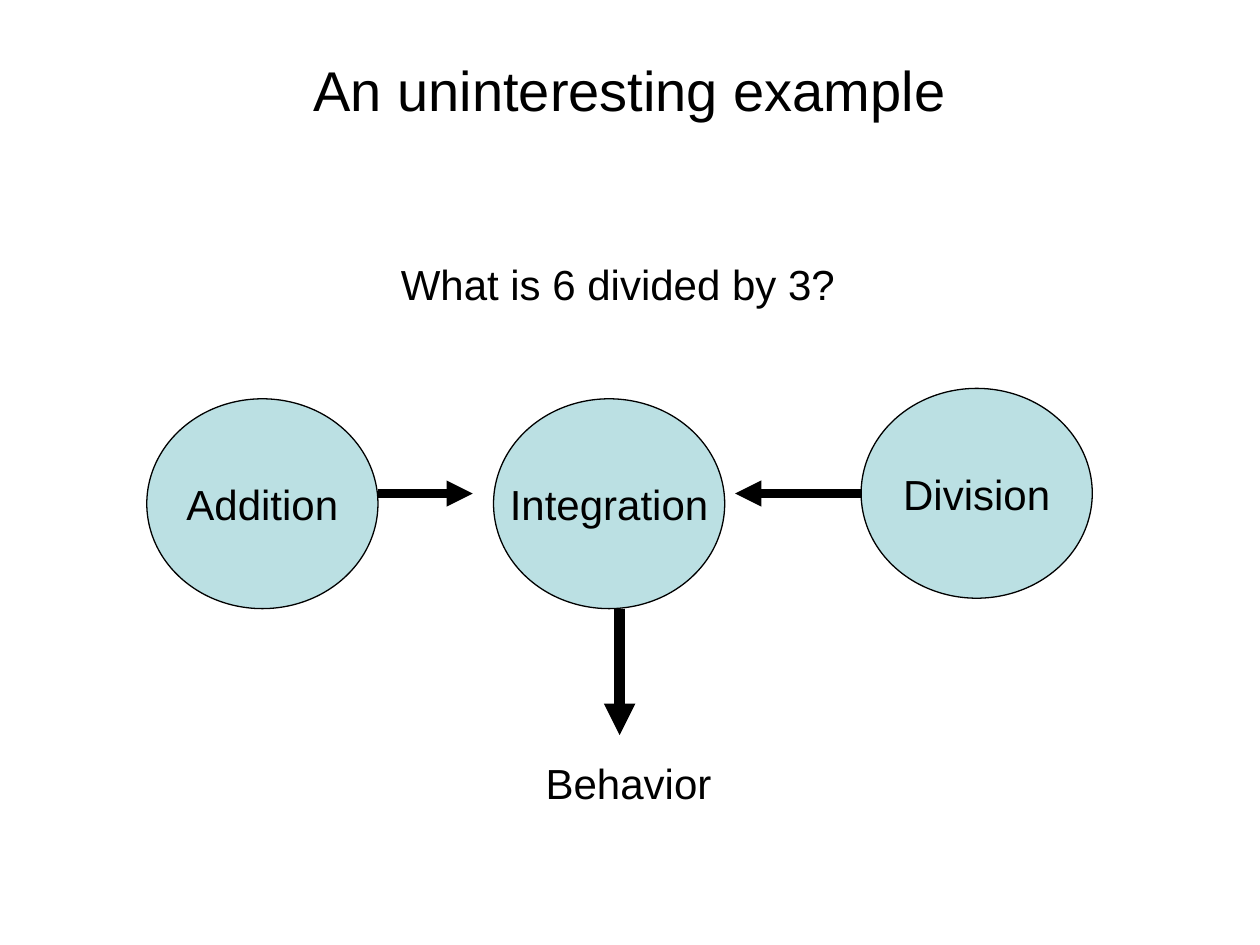
from dataclasses import dataclass

from lxml import etree
from pptx import Presentation
from pptx.dml.color import RGBColor
from pptx.enum.shapes import MSO_CONNECTOR, MSO_SHAPE
from pptx.enum.text import MSO_ANCHOR, MSO_AUTO_SIZE, PP_ALIGN
from pptx.oxml.ns import qn
from pptx.util import Cm, Pt

STRAIGHT = MSO_CONNECTOR.STRAIGHT
ELLIPSE = MSO_SHAPE.OVAL
MIDDLE = MSO_ANCHOR.MIDDLE
FIT_SHAPE = MSO_AUTO_SIZE.SHAPE_TO_FIT_TEXT
LEFT, CENTER = PP_ALIGN.LEFT, PP_ALIGN.CENTER


@dataclass(frozen=True)
class Theme:
    font: str = "Arial"
    ink: RGBColor = RGBColor(0x00, 0x00, 0x00)
    node_fill: RGBColor = RGBColor(0xBB, 0xE0, 0xE3)
    title_size: int = 32
    body_size: int = 24
    outline: float = 0.75


THEME = Theme()

# Content; all lengths in centimetres
TITLE = "An uninteresting example"
NODE_WIDTH, NODE_HEIGHT = 4.66, 4.23
NODES = {  # name: (left, top)
    "Addition": (2.96, 8.04),
    "Division": (17.36, 7.83),
    "Integration": (9.95, 8.04),
}
ARROW_Y, ARROW_X = 9.95, 12.49
ARROWS = [  # start, end, weight in points
    ((NODES["Addition"][0] + NODE_WIDTH, ARROW_Y), (9.53, ARROW_Y), 5),
    ((NODES["Division"][0], ARROW_Y), (14.82, ARROW_Y), 5),
    ((ARROW_X, NODES["Integration"][1] + NODE_HEIGHT), (ARROW_X, 14.82), 6),
]
LABELS = [  # text, left, top, width
    ("Behavior", 10.75, 15.14, 3.86),
    ("What is 6 divided by 3?", 7.83, 5.08, 9.27),
]
LABEL_HEIGHT = 1.27


def write(shape, text, size, alignment):
    shape.text_frame.text = text
    paragraph = shape.text_frame.paragraphs[0]
    paragraph.alignment = alignment
    font = paragraph.runs[0].font
    font.name, font.size = THEME.font, Pt(size)
    font.color.rgb = THEME.ink


def add_node(slide, name, left, top):
    node = slide.shapes.add_shape(
        ELLIPSE, Cm(left), Cm(top), Cm(NODE_WIDTH), Cm(NODE_HEIGHT))
    node.shadow.inherit = False
    node.fill.solid()
    node.fill.fore_color.rgb = THEME.node_fill
    node.line.color.rgb = THEME.ink
    node.line.width = Pt(THEME.outline)
    write(node, name, THEME.body_size, CENTER)
    node.text_frame.word_wrap = False
    node.text_frame.vertical_anchor = MIDDLE


def add_arrow(slide, start, end, weight):
    arrow = slide.shapes.add_connector(
        STRAIGHT, *(Cm(value) for value in start + end))
    arrow.line.color.rgb = THEME.ink
    arrow.line.width = Pt(weight)
    etree.SubElement(arrow.line._get_or_add_ln(), qn("a:tailEnd"), type="triangle")
    etree.SubElement(arrow._element.spPr, qn("a:effectLst"))


def add_label(slide, text, left, top, width):
    label = slide.shapes.add_textbox(
        Cm(left), Cm(top), Cm(width), Cm(LABEL_HEIGHT))
    write(label, text, THEME.body_size, LEFT)
    label.text_frame.word_wrap = False
    label.text_frame.auto_size = FIT_SHAPE


def main():
    presentation = Presentation()
    presentation.slide_width, presentation.slide_height = Cm(25.4), Cm(19.05)
    slide = presentation.slides.add_slide(presentation.slide_layouts[5])

    # Title
    title = slide.shapes.title
    title.left, title.top = Cm(1.9), Cm(0.2)
    title.width, title.height = Cm(21.6), Cm(3.18)
    write(title, TITLE, THEME.title_size, CENTER)
    title.text_frame.vertical_anchor = MIDDLE

    # Diagram
    for name, position in NODES.items():
        add_node(slide, name, *position)
    for arrow in ARROWS:
        add_arrow(slide, *arrow)

    # Question and outcome
    for label in LABELS:
        add_label(slide, *label)

    presentation.save("out.pptx")


if __name__ == "__main__":
    main()
